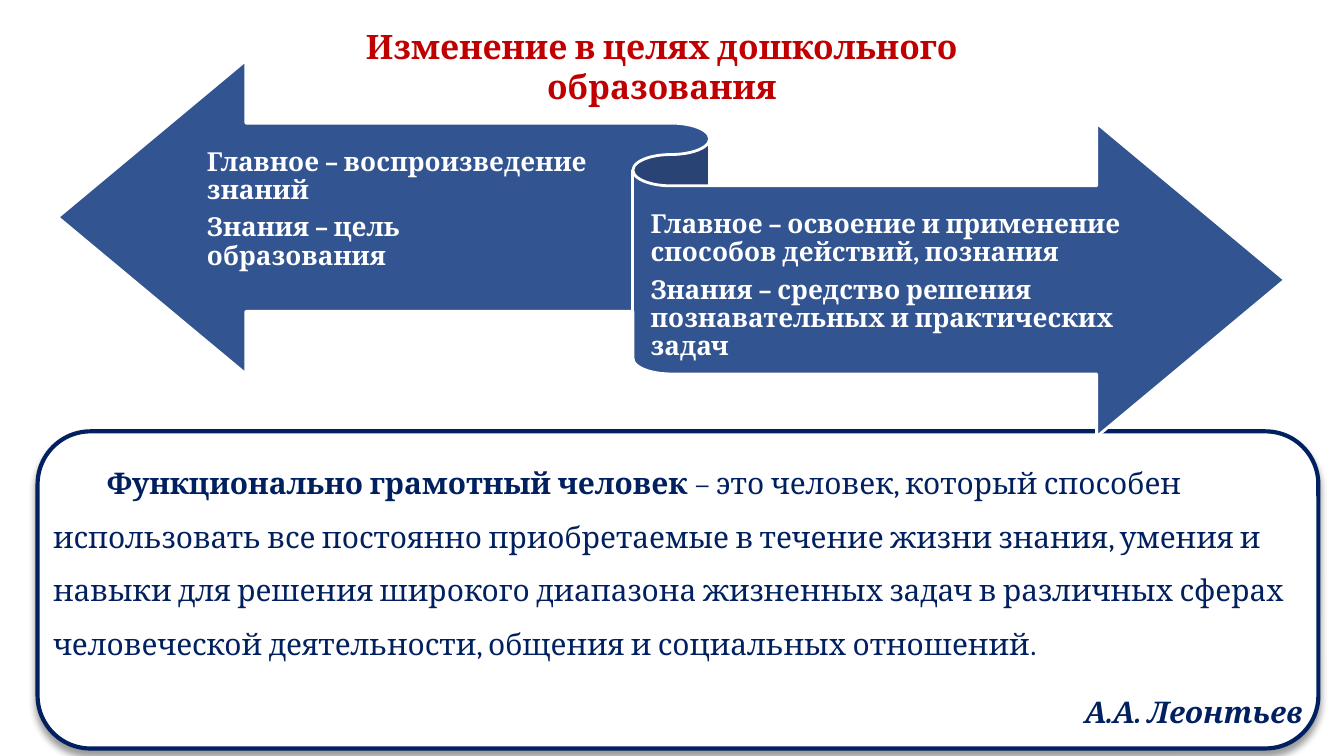
from lxml import etree
from pptx import Presentation
from pptx.dml.color import RGBColor
from pptx.enum.shapes import MSO_SHAPE
from pptx.enum.text import MSO_ANCHOR, PP_ALIGN
from pptx.oxml.ns import qn
from pptx.util import Inches, Pt

RIBBON = MSO_SHAPE.LEFT_RIGHT_RIBBON
ROUNDED = MSO_SHAPE.ROUNDED_RECTANGLE
TOP, MIDDLE = MSO_ANCHOR.TOP, MSO_ANCHOR.MIDDLE
LEFT, CENTER, RIGHT = PP_ALIGN.LEFT, PP_ALIGN.CENTER, PP_ALIGN.RIGHT

FONT = "Cambria"
NAVY, BLUE, RED, WHITE = "002060", "325491", "C00000", "FFFFFF"


def rgb(color):
    return RGBColor.from_string(color)


def inches(*values):
    return [Inches(v) for v in values]


def set_frame(tf, anchor, margins):
    tf.word_wrap = True
    tf.vertical_anchor = anchor
    tf.margin_left, tf.margin_top, tf.margin_right, tf.margin_bottom = inches(*margins)


def add_run(p, text, size=16, color=NAVY, bold=False, italic=False):
    r = p.add_run()
    r.text = text
    r.font.name = FONT
    r.font.size = Pt(size)
    r.font.color.rgb = rgb(color)
    r.font.bold = bold
    r.font.italic = italic


def format_paragraph(p, align=LEFT, spacing=1.0, before=0, after=0):
    p.alignment = align
    p.line_spacing = spacing
    p.space_before = Pt(before)
    p.space_after = Pt(after)


def add_shape(s, kind, box, fill, line, width):
    sp = s.shapes.add_shape(kind, *inches(*box))
    sp.shadow.inherit = False
    sp.fill.solid()
    sp.fill.fore_color.rgb = rgb(fill)
    sp.line.color.rgb = rgb(line)
    sp.line.width = Pt(width)
    return sp


def add_shadow(sp):
    effects = sp._element.spPr.find(qn("a:effectLst"))
    shadow = etree.SubElement(effects, qn("a:outerShdw"), blurRad=str(Pt(4)),
                              dist=str(Pt(3)), dir="5400000", rotWithShape="0")
    color = etree.SubElement(shadow, qn("a:srgbClr"), val="000000")
    etree.SubElement(color, qn("a:alpha"), val="40000")


def add_title(s, text):
    title = s.shapes.title
    title.left, title.top, title.width, title.height = inches(1.85, 0.14, 6.15, 0.4)
    tf = title.text_frame
    set_frame(tf, TOP, (0.1, 0.05, 0.1, 0.05))
    p = tf.paragraphs[0]
    format_paragraph(p, align=CENTER)
    add_run(p, text, size=18, color=RED, bold=True)


def add_definition(s, term, meaning, author):
    sp = add_shape(s, ROUNDED, (0.28, 3.21, 9.53, 2.36), WHITE, NAVY, 2.25)
    add_shadow(sp)
    tf = sp.text_frame
    set_frame(tf, TOP, (0, 0, 0, 0))
    p = tf.paragraphs[0]
    format_paragraph(p, spacing=1.5, before=7.5)
    p._p.get_or_add_pPr().set("indent", str(Inches(0.4)))
    add_run(p, term, bold=True)
    add_run(p, meaning)
    p = tf.add_paragraph()
    format_paragraph(p, align=RIGHT, spacing=1.5, before=7.5)
    add_run(p, author, bold=True, italic=True)


def add_arrow_text(s, box, lines):
    tf = s.shapes.add_textbox(*inches(*box)).text_frame
    set_frame(tf, MIDDLE, (0, 0.05, 0, 0.06))
    for i, line in enumerate(lines):
        p = tf.add_paragraph() if i else tf.paragraphs[0]
        format_paragraph(p, spacing=0.9, after=4.9)
        for j, part in enumerate(line.split("\n")):
            if j:
                p.add_line_break()
            add_run(p, part, size=14, color=WHITE, bold=True)


def main():
    prs = Presentation()
    # Standard 16:9 page
    prs.slide_width = Inches(10)
    prs.slide_height = Inches(10 * 9 / 16)
    s = prs.slides.add_slide(prs.slide_layouts[5])

    add_title(s, "Изменение в целях дошкольного образования")

    # Definition panel, behind the tip of the right arrow
    add_definition(
        s,
        "Функционально грамотный человек ",
        "– это человек, который способен использовать все постоянно приобретаемые "
        "в течение жизни знания, умения и навыки для решения широкого диапазона "
        "жизненных задач в различных сферах человеческой деятельности, общения "
        "и социальных отношений.",
        "А.А. Леонтьев",
    )

    # Two-way ribbon: former goals on the left, new goals on the right
    add_shape(s, RIBBON, (0.43, 0.45, 9.13, 2.8), BLUE, WHITE, 1.5)
    add_arrow_text(s, (1.54, 1.12, 2.84, 0.89), [
        "Главное – воспроизведение знаний",
        "Знания – цель\nобразования",
    ])
    add_arrow_text(s, (4.84, 1.52, 3.55, 1.23), [
        "Главное – освоение и применение способов действий, познания",
        "Знания – средство решения познавательных и практических задач",
    ])

    prs.save("out.pptx")


if __name__ == "__main__":
    main()
